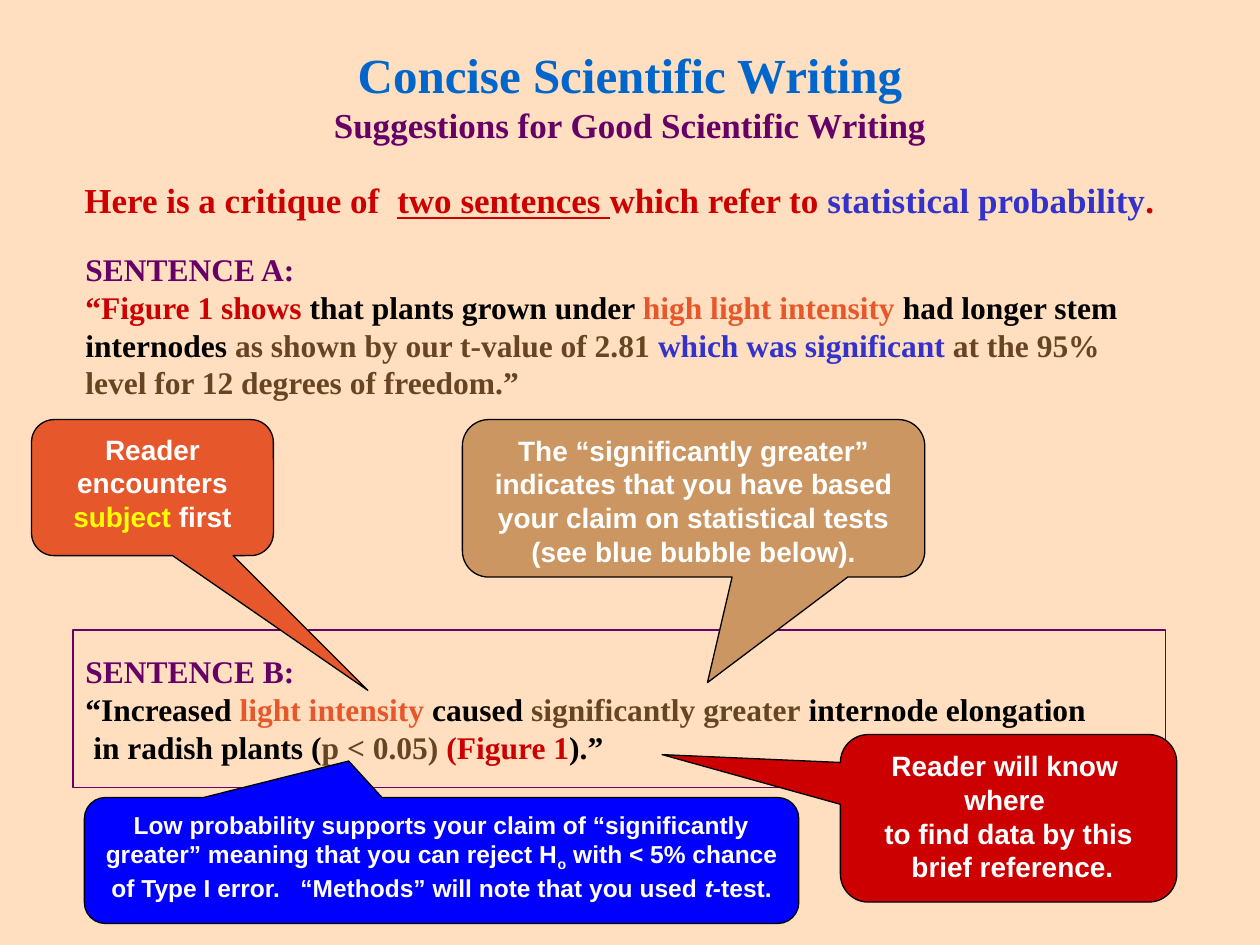
from copy import deepcopy
from pptx import Presentation
from pptx.dml.color import RGBColor
from pptx.enum.shapes import MSO_SHAPE
from pptx.enum.text import MSO_ANCHOR, MSO_AUTO_SIZE, PP_ALIGN
from pptx.util import Inches, Pt

COLOURS = {
    "background": "FFDFBF", "purple": "660066", "sky": "0066CC", "red": "CC0000",
    "black": "000000", "orange": "E6582C", "brown": "684522", "indigo": "3333CC",
    "blue": "0000FF", "tan": "CB9661", "white": "FFFFFF", "yellow": "FFFF00",
}
SERIF, SANS = "Times New Roman", "Arial"

TITLE = [[
    ("Concise Scientific Writing\n", "sky", {"size": Pt(28)}),
    ("Suggestions for Good Scientific Writing", "purple"),
]]
INTRO = [[
    ("Here is a critique of  ", "red"),
    ("two sentences ", "red", {"underline": True}),
    ("which refer to ", "red"),
    ("statistical probability", "indigo"),
    (".", "red"),
]]
SENTENCE_A = [[
    ("SENTENCE A:\n", "purple"),
    ("“Figure 1 shows", "red"),
    (" that plants grown under ", "black"),
    ("high light intensity", "orange"),
    (" had longer stem internodes ", "black"),
    ("as shown by our t-value of 2.81 ", "brown"),
    ("which was significant", "indigo"),
    (" at the 95% level for 12 degrees of freedom.”", "brown"),
]]
SENTENCE_B = [[
    ("SENTENCE B:\n", "purple"),
    ("“Increased ", "black"),
    ("light intensity", "orange"),
    (" caused ", "black"),
    ("significantly greater", "brown"),
    (" internode elongation\n in radish plants (", "black"),
    ("p < 0.05) ", "brown"),
    ("(Figure 1", "red"),
    (").”", "black"),
]]
CALLOUTS = [
    ((0.67, 6.33, 5.67, 1), (-0.13, -0.79), "blue", 14, [[
        ("Low probability supports your claim of “significantly greater” "
         "meaning that you can reject H", "white"),
        ("o", "white", {"baseline": -25}),
        (" with < 5% chance of Type I error.   “Methods” will note that you used ", "white"),
        ("t-", "white", {"italic": True}),
        ("test.", "white"),
    ]]),
    ((3.67, 3.33, 3.67, 1.25), (0.03, 1.17), "tan", 16, [[
        ("The “significantly greater” indicates that you have based your claim "
         "on statistical tests (see blue bubble below).", "white"),
    ]]),
    ((0.25, 3.33, 1.92, 1.08), (0.89, 1.49), "orange", 16, [[
        ("Reader encounters ", "white"), ("subject", "yellow"), (" first", "white"),
    ]]),
    ((6.67, 5.83, 2.67, 1.33), (-1.03, -0.38), "red", 16, [
        [("Reader will know ", "white")],
        [("where ", "white")],
        [("to find data by this", "white")],
        [(" brief reference.", "white")],
    ]),
]


def rgb(name):
    return RGBColor.from_string(COLOURS[name])


def box(place):
    return [Inches(length) for length in place]


def add_run(paragraph, words, colour, formats):
    run = paragraph.add_run()
    run.text = words
    run.font.color.rgb = rgb(colour)
    for attribute, value in formats.items():
        if attribute == "baseline":
            run._r.get_or_add_rPr().set("baseline", str(value * 1000))
        else:
            setattr(run.font, attribute, value)
    return run


def write(part, paragraphs, font, size, align=PP_ALIGN.LEFT, anchor=MSO_ANCHOR.MIDDLE):
    frame = part.text_frame
    layout = {"word_wrap": True, "auto_size": MSO_AUTO_SIZE.NONE, "vertical_anchor": anchor}
    for attribute, value in layout.items():
        setattr(frame, attribute, value)
    for index, pieces in enumerate(paragraphs):
        paragraph = frame.add_paragraph() if index else frame.paragraphs[0]
        paragraph.alignment = align
        for words, colour, *extra in pieces:
            formats = {"name": font, "size": Pt(size), "bold": True}
            for more in extra:
                formats.update(more)
            lines = words.split("\n")
            for number, line in enumerate(lines):
                if number:
                    paragraph.add_line_break()
                    paragraph._p[-1].append(deepcopy(run._r.rPr))
                if line:
                    run = add_run(paragraph, line, colour, formats)


def outline(shape, colour):
    shape.shadow.inherit = False
    shape.line.color.rgb = rgb(colour)
    shape.line.width = Pt(0.75)


def main():
    deck = Presentation()
    deck.slide_width, deck.slide_height = Inches(10), Inches(7.5)
    slide = deck.slides.add_slide(deck.slide_layouts[5])
    slide.background.fill.solid()
    slide.background.fill.fore_color.rgb = rgb("background")
    shapes = slide.shapes

    title = shapes.title
    title.left, title.top, title.width, title.height = box((0.75, 0.42, 8.5, 0.67))
    write(title, TITLE, SERIF, 20, PP_ALIGN.CENTER)

    frame_b = shapes.add_shape(MSO_SHAPE.RECTANGLE, *box((0.58, 5, 8.67, 1.25)))
    frame_b.fill.background()
    outline(frame_b, "purple")
    write(frame_b, SENTENCE_B, SERIF, 18)

    write(shapes.add_textbox(*box((0.58, 2, 8.67, 1.17))), SENTENCE_A, SERIF, 18)
    write(shapes.add_textbox(*box((0.25, 1.25, 9.33, 0.67))), INTRO, SERIF, 20, PP_ALIGN.CENTER)

    for place, tip, fill, size, paragraphs in CALLOUTS:
        callout = shapes.add_shape(MSO_SHAPE.ROUNDED_RECTANGULAR_CALLOUT, *box(place))
        callout.adjustments[0], callout.adjustments[1] = tip
        callout.fill.solid()
        callout.fill.fore_color.rgb = rgb(fill)
        outline(callout, "black")
        write(callout, paragraphs, SANS, size, PP_ALIGN.CENTER, MSO_ANCHOR.TOP)

    deck.save("out.pptx")


if __name__ == "__main__":
    main()
